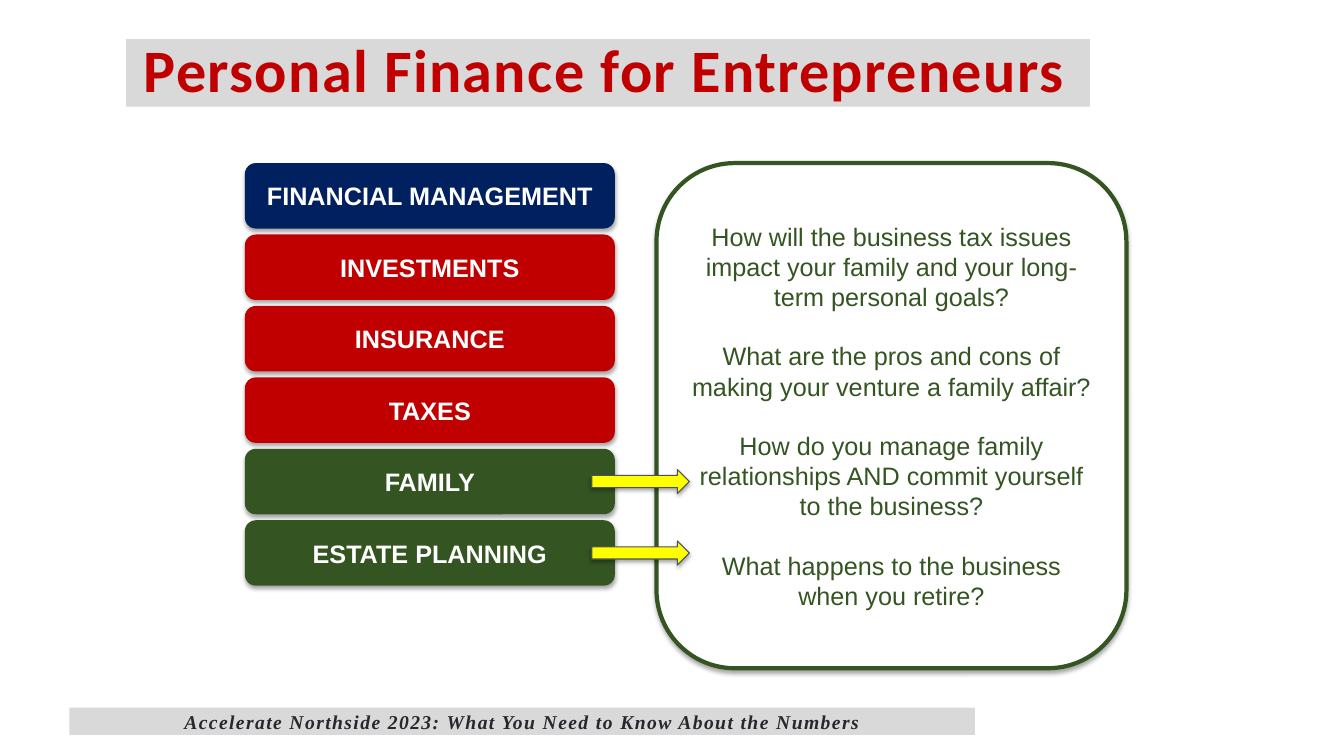
from lxml import etree
from pptx import Presentation
from pptx.dml.color import RGBColor as RGB
from pptx.enum.shapes import MSO_SHAPE as Kind
from pptx.enum.text import MSO_ANCHOR as Anchor, PP_ALIGN as Align
from pptx.oxml import parse_xml
from pptx.oxml.ns import nsdecls
from pptx.util import Cm, Pt

NAVY = RGB(0x00, 0x20, 0x60)
RED = RGB(0xC0, 0x00, 0x00)
GREEN = RGB(0x34, 0x55, 0x22)
YELLOW = RGB(0xFF, 0xFF, 0x00)
WHITE = RGB(0xFF, 0xFF, 0xFF)
GREY = RGB(0xD9, 0xD9, 0xD9)
SLATE = RGB(0x4C, 0x51, 0x5A)
INK = RGB(0x26, 0x28, 0x2D)

TOPICS = [
    ("FINANCIAL MANAGEMENT", NAVY, False),
    ("INVESTMENTS", RED, False),
    ("INSURANCE", RED, False),
    ("TAXES", RED, False),
    ("FAMILY", GREEN, True),
    ("ESTATE PLANNING", GREEN, True),
]
ASKS = [
    "How will the business tax issues impact your family and your long-term personal goals?",
    "What are the pros and cons of making your venture a family affair?",
    "How do you manage family relationships AND commit yourself to the business?",
    "What happens to the business when you retire?",
]
SHADE = (
    f'<a:effectLst {nsdecls("a")}><a:outerShdw blurRad="{Pt(3.1)}" dist="{Pt(1.8)}" '
    'dir="5400000" rotWithShape="0"><a:srgbClr val="000000"><a:alpha val="35000"/>'
    '</a:srgbClr></a:outerShdw></a:effectLst>'
)


def draw(slide, kind, box, fill, line=None, width=0.75, shade=True):
    shape = slide.shapes.add_shape(kind, *[Cm(v) for v in box])
    shape.fill.solid()
    shape.fill.fore_color.rgb = fill
    if line is None:
        shape.line.fill.background()
    else:
        shape.line.color.rgb = line
        shape.line.width = Pt(width)
    shape.shadow.inherit = False
    if shade:
        props = shape.element.spPr
        props.replace(props.find("{*}effectLst"), parse_xml(SHADE))
    return shape


def write(shape, *lines, size=18, color=WHITE, face="Arial", bold=False,
          italic=False, align=Align.CENTER, gap=0, pitch=None, track=0, inset=None):
    frame = shape.text_frame
    frame.word_wrap = True
    frame.vertical_anchor = Anchor.MIDDLE
    if inset is not None:
        frame.margin_left = Cm(inset)
        frame.margin_right = frame.margin_top = frame.margin_bottom = 0
    for i, text in enumerate(lines):
        para = frame.paragraphs[0] if i == 0 else frame.add_paragraph()
        para.alignment = align
        if pitch:
            para.line_spacing = pitch
        if i and gap:
            para.space_before = Pt(gap)
        run = para.add_run()
        run.text = text
        font = run.font
        font.name, font.size = face, Pt(size)
        font.bold, font.italic = bold, italic
        font.color.rgb = color
        if track:
            run._r.get_or_add_rPr().set("spc", str(track * 100))


def title(slide, box):
    band = draw(slide, Kind.RECTANGLE, box, GREY, shade=False)
    write(band, "Personal Finance for Entrepreneurs", size=43, color=RED, face="Calibri",
          bold=True, align=Align.LEFT, pitch=0.9, track=1, inset=0.44)


def topics(slide, box):
    left, top, wide, high = box
    step = 1.8
    for i, (name, fill, _) in enumerate(TOPICS):
        button = draw(slide, Kind.ROUNDED_RECTANGLE, (left, top + i * step, wide, high), fill)
        write(button, name, bold=True)


def panel(slide, box):
    card = draw(slide, Kind.ROUNDED_RECTANGLE, box, WHITE, GREEN, 3)
    write(card, *ASKS, color=GREEN, gap=20.7)


def arrows(slide, box):
    left, top, wide, high = box
    step, long, thick, lap = 1.8, 2.46, 0.61, 0.58
    for i, (_, _, linked) in enumerate(TOPICS):
        if linked:
            spot = (left + wide - lap, top + i * step + (high - thick) / 2, long, thick)
            draw(slide, Kind.RIGHT_ARROW, spot, YELLOW, SLATE)


def footer(slide, box):
    band = draw(slide, Kind.RECTANGLE, box, GREY, shade=False)
    write(band, "Accelerate Northside 2023: What You Need to Know About the Numbers",
          size=14, color=INK, face="Times New Roman", bold=True, italic=True,
          track=1, inset=0)


def main():
    deck = Presentation()
    deck.slide_width, deck.slide_height = Cm(33.86), Cm(19.05)
    slide = deck.slides.add_slide(deck.slide_layouts[6])
    stack = (6.17, 4.11, 9.32, 1.65)
    topics(slide, stack)
    panel(slide, (16.54, 4.11, 11.84, 12.73))
    arrows(slide, stack)
    title(slide, (3.18, 0.99, 24.28, 1.7))
    footer(slide, (1.75, 17.83, 22.81, 0.69))
    deck.save("out.pptx")


if __name__ == "__main__":
    main()
